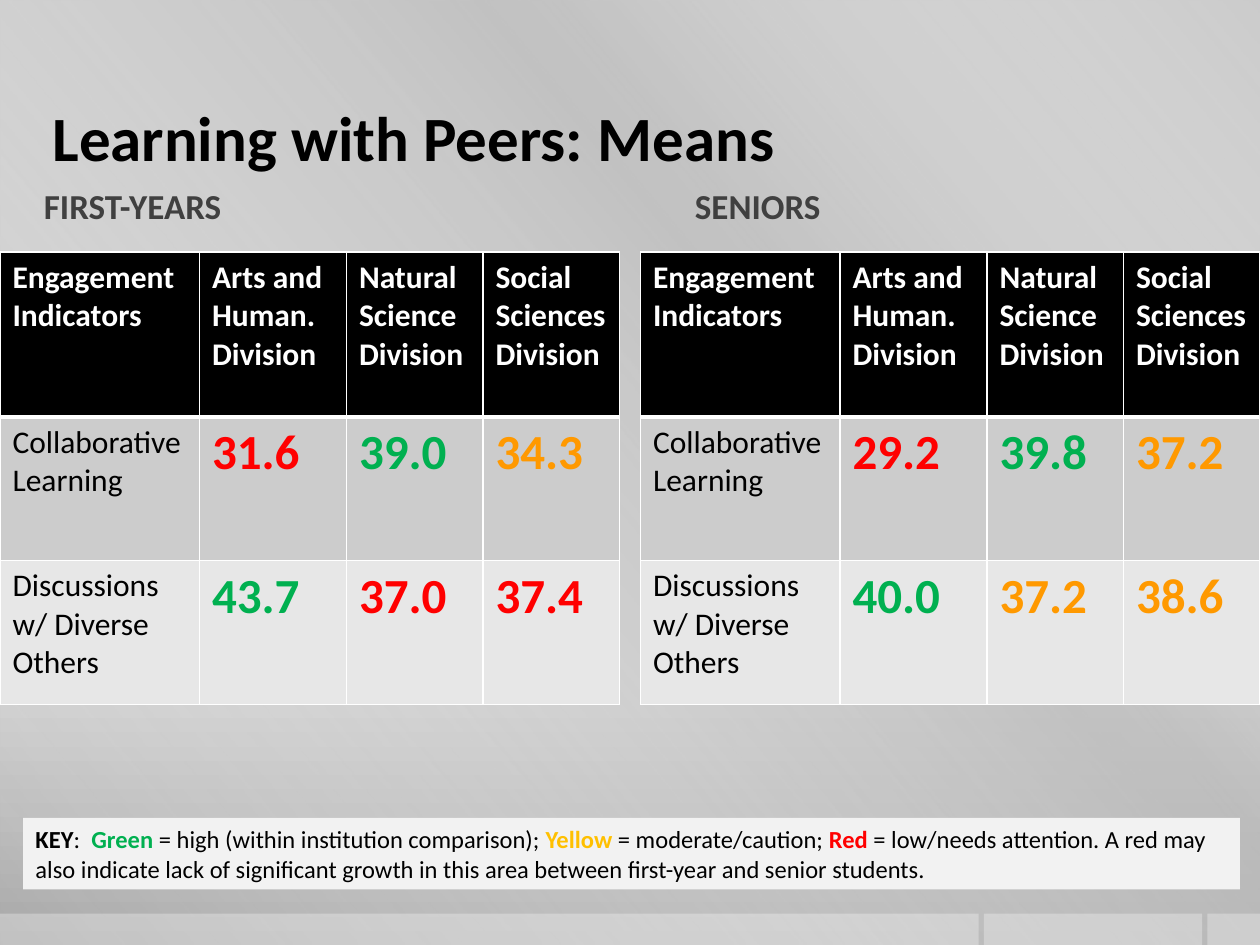
from dataclasses import dataclass

from lxml import etree
from pptx import Presentation
from pptx import util as u
from pptx.dml.color import RGBColor
from pptx.enum import shapes, text
from pptx.oxml import ns


@dataclass(frozen=True)
class Theme:
    font: str = "Calibri"
    black: str = "000000"
    white: str = "FFFFFF"
    heading: str = "404040"
    band_dark: str = "CCCCCC"
    band_light: str = "E7E7E7"
    panel: str = "F2F2F2"
    shade: str = "BFBFBF"
    high: str = "00B050"
    moderate: str = "FF9900"
    yellow: str = "FFC000"
    low: str = "FF0000"
    title_size: int = 36
    score_size: int = 28
    heading_size: int = 20
    table_size: int = 18
    key_size: int = 14


class SlideBuilder:
    COLUMNS, ROWS = 120, 90

    def __init__(self, presentation, theme):
        self.theme = theme
        self.column = presentation.slide_width / self.COLUMNS
        self.row = presentation.slide_height / self.ROWS
        self.slide = presentation.slides.add_slide(presentation.slide_layouts[5])

    def area(self, left, top, width, height):
        return (int(left * self.column), int(top * self.row),
                int(width * self.column), int(height * self.row))

    def style(self, font, size, color, bold=False):
        font.name, font.size, font.bold = self.theme.font, u.Pt(size), bold
        font.color.rgb = RGBColor.from_string(color)

    def add_color(self, parent, color, opacity=100):
        element = etree.SubElement(parent, ns.qn("a:srgbClr"), val=color)
        if opacity < 100:
            etree.SubElement(element, ns.qn("a:alpha"), val=str(opacity * 1000))

    def gradient(self, fill, owner, stops, angle):
        fill.gradient()
        gradient = next(owner.iter(ns.qn("a:gradFill")))
        stop_list = gradient.find(ns.qn("a:gsLst"))
        for stop in list(stop_list):
            stop_list.remove(stop)
        for position, color, opacity in stops:
            stop = etree.SubElement(stop_list, ns.qn("a:gs"), pos=str(position * 1000))
            self.add_color(stop, color, opacity)
        gradient.find(ns.qn("a:lin")).set("ang", str(angle * 60000))

    def background(self, stops, angle):
        self.gradient(self.slide.background.fill, self.slide.element, stops, angle)

    def rectangle(self, area, color, opacity=100):
        shape = self.slide.shapes.add_shape(
            shapes.MSO_SHAPE.RECTANGLE, *self.area(*area))
        shape.shadow.inherit = False
        shape.line.fill.background()
        shape.fill.solid()
        shape.fill.fore_color.rgb = RGBColor.from_string(color)
        if opacity < 100:
            fill = shape.element.spPr.find(ns.qn("a:solidFill"))
            fill.remove(fill[0])
            self.add_color(fill, color, opacity)
        return shape

    def sheen(self, stops, angle):
        shape = self.rectangle((0, 0, self.COLUMNS, self.ROWS), self.theme.white)
        self.gradient(shape.fill, shape.element.spPr, stops, angle)

    def title(self, area, wording):
        title = self.slide.shapes.title
        self.slide.shapes.element.append(title.element)
        title.left, title.top, title.width, title.height = self.area(*area)
        frame = title.text_frame
        frame.text = wording
        frame.margin_left = frame.margin_right = 0
        frame.vertical_anchor = text.MSO_ANCHOR.MIDDLE
        paragraph = frame.paragraphs[0]
        paragraph.alignment = text.PP_ALIGN.LEFT
        self.style(paragraph.font, self.theme.title_size, self.theme.black, True)

    def heading(self, area, wording):
        frame = self.slide.shapes.add_textbox(*self.area(*area)).text_frame
        frame.word_wrap = True
        frame.text = wording
        self.style(frame.paragraphs[0].font, self.theme.heading_size,
                   self.theme.heading, True)

    def key(self, area, runs):
        frame = self.rectangle(area, self.theme.panel).text_frame
        frame.word_wrap = True
        frame.vertical_anchor = text.MSO_ANCHOR.TOP
        paragraph = frame.paragraphs[0]
        paragraph.alignment = text.PP_ALIGN.LEFT
        for wording, color, bold in runs:
            run = paragraph.add_run()
            run.text = wording
            self.style(run.font, self.theme.key_size, color, bold)

    def border(self, cell, widths):
        properties = cell._tc.get_or_add_tcPr()
        for index, (side, width) in enumerate(widths.items()):
            line = etree.Element(ns.qn(f"a:ln{side}"), w=str(u.Pt(width)))
            self.add_color(etree.SubElement(line, ns.qn("a:solidFill")), self.theme.white)
            properties.insert(index, line)

    def cell(self, cell, wording, size, color, bold, fill, widths):
        cell.text = wording
        for paragraph in cell.text_frame.paragraphs:
            self.style(paragraph.font, size, color, bold)
        cell.fill.solid()
        cell.fill.fore_color.rgb = RGBColor.from_string(fill)
        self.border(cell, widths)

    def table(self, left, top, widths, heights, headers, records):
        theme = self.theme
        table = self.slide.shapes.add_table(
            len(heights), len(widths),
            *self.area(left, top, sum(widths), sum(heights))).table
        for column, width in zip(table.columns, widths):
            column.width = int(width * self.column)
        for row, height in zip(table.rows, heights):
            row.height = int(height * self.row)
        for index, header in enumerate(headers):
            self.cell(table.cell(0, index), header, theme.table_size, theme.white,
                      True, theme.black, {"L": 1, "R": 1, "T": 1, "B": 3})
        bands = (theme.band_dark, theme.band_light)
        for number, ((label, scores), band) in enumerate(zip(records, bands), 1):
            lines = {"L": 1, "R": 1, "T": 3 if number == 1 else 1, "B": 1}
            self.cell(table.cell(number, 0), label, theme.table_size, theme.black,
                      False, band, lines)
            for index, (score, color) in enumerate(scores, 1):
                self.cell(table.cell(number, index), score, theme.score_size, color,
                          True, band, lines)


def main():
    presentation = Presentation()
    presentation.slide_width, presentation.slide_height = u.Inches(10), u.Inches(7.5)
    theme = Theme()
    builder = SlideBuilder(presentation, theme)
    high, moderate, low = theme.high, theme.moderate, theme.low

    builder.background([(0, "CBCBCB", 100), (76, "C8C8C8", 100), (100, "A7A7A7", 100)], 90)
    builder.sheen([(0, theme.white, 0), (34, theme.shade, 61),
                   (38, theme.shade, 76), (100, theme.white, 0)], 140)
    for left, width in ((115, 5), (93.7, 20.8), (0, 93.2)):
        builder.rectangle((left, 87, width, 3), theme.white, 30)
    builder.title((5, 7, 108, 12), "Learning with Peers: Means")

    headers = ("Engagement Indicators", "Arts and Human. Division",
               "Natural Science\nDivision", "Social Sciences Division")
    labels = ("Collaborative Learning", "Discussions w/ Diverse Others")
    first_years = ((("31.6", low), ("39.0", high), ("34.3", moderate)),
                   (("43.7", high), ("37.0", low), ("37.4", low)))
    seniors = ((("29.2", low), ("39.8", high), ("37.2", moderate)),
               (("40.0", high), ("37.2", moderate), ("38.6", moderate)))
    for left, scores in ((0, first_years), (61, seniors)):
        builder.table(left, 24, (19, 14, 13, 13), (15.7, 13.7, 13.7),
                      headers, zip(labels, scores))
    builder.heading((3, 17, 51, 5.25), "FIRST-YEARS")
    builder.heading((65, 17, 33, 5.25), "SENIORS")

    builder.key((2.2, 77.9, 115.9, 6.8), (
        ("KEY", theme.black, True),
        (":  ", theme.black, False),
        ("Green ", high, True),
        ("= high (within institution comparison); ", theme.black, False),
        ("Yellow", theme.yellow, True),
        (" = moderate/caution; ", theme.black, False),
        ("Red", low, True),
        (" = low/needs attention. A red may also indicate lack of significant growth "
         "in this area between first-year and senior students.", theme.black, False)))
    presentation.save("out.pptx")


if __name__ == "__main__":
    main()
